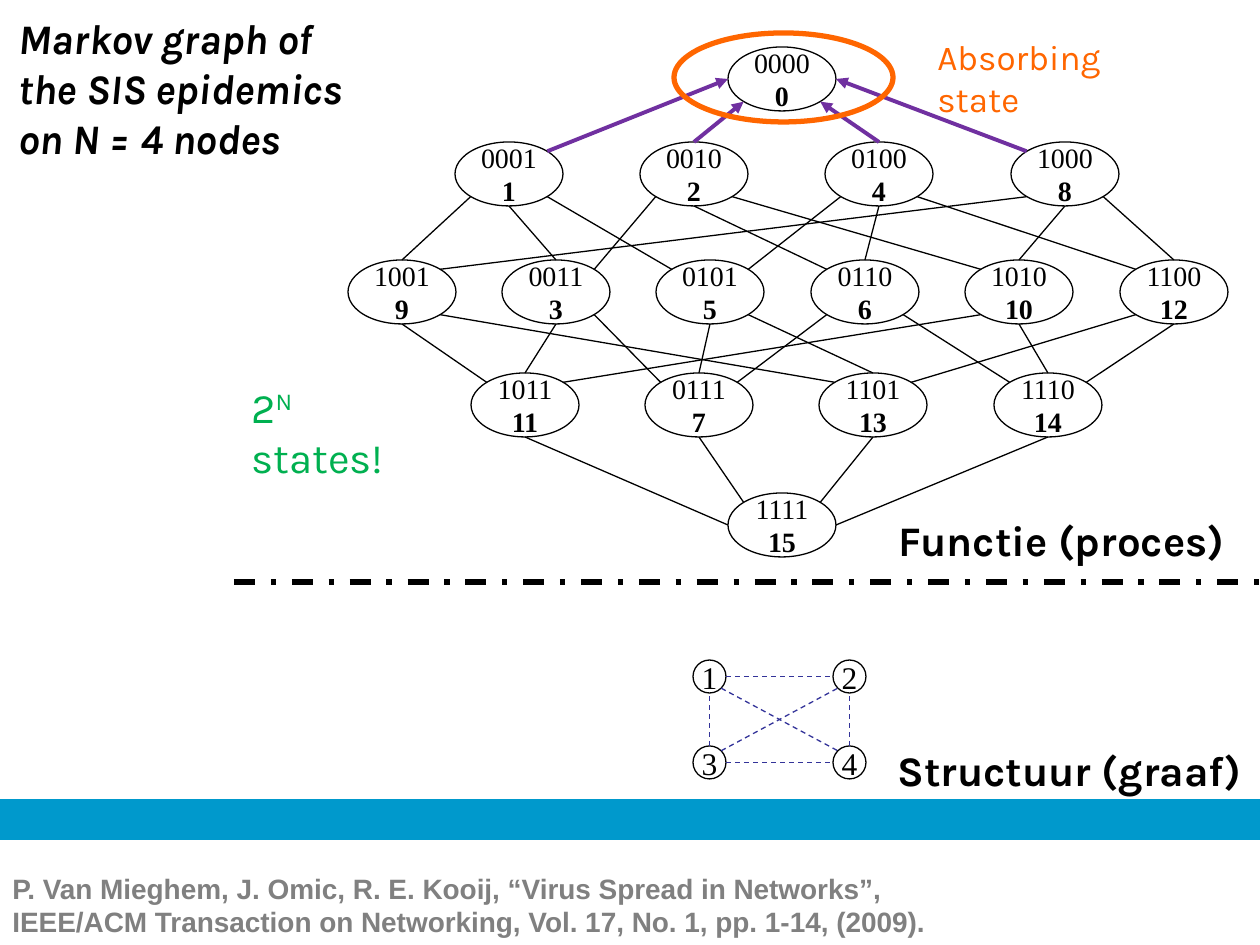
import lxml.etree
import pptx
import pptx.dml.color
import pptx.enum.dml
import pptx.enum.shapes
import pptx.enum.text
import pptx.oxml.ns
import pptx.util

PX = 914400 // 126
OVAL = pptx.enum.shapes.MSO_SHAPE.OVAL
DASH = pptx.enum.dml.MSO_LINE.DASH
DASH_DOT = pptx.enum.dml.MSO_LINE.DASH_DOT
qn = pptx.oxml.ns.qn
color = pptx.dml.color.RGBColor.from_string

deck = pptx.Presentation()
deck.slide_width = pptx.util.Inches(10)
deck.slide_height = pptx.util.Inches(7.5)
slide = deck.slides.add_slide(deck.slide_layouts[6])


def draw_line(begin, end, hex_color, width, dash=None, arrow=False):
    line = slide.shapes.add_connector(
        pptx.enum.shapes.MSO_CONNECTOR.STRAIGHT, *[round(v * PX) for v in (*begin, *end)])
    line.line.color.rgb = color(hex_color)
    line.line.width = pptx.util.Pt(width)
    if dash:
        line.line.dash_style = dash
    if arrow:
        outline = line.line._get_or_add_ln()
        lxml.etree.SubElement(outline, qn("a:headEnd"), type="triangle")
    lxml.etree.SubElement(line._element.spPr, qn("a:effectLst"))


def draw_oval(left, top, width, height, hex_color, weight):
    oval = slide.shapes.add_shape(OVAL, left * PX, top * PX, width * PX, height * PX)
    oval.shadow.inherit = False
    oval.fill.background()
    oval.line.color.rgb = color(hex_color)
    oval.line.width = pptx.util.Pt(weight)
    return oval


footer_band = slide.shapes.add_shape(
    pptx.enum.shapes.MSO_SHAPE.RECTANGLE, 0, 800 * PX, 1260 * PX, 39 * PX)
footer_band.shadow.inherit = False
footer_band.fill.solid()
footer_band.fill.fore_color.rgb = color("0099CC")
footer_band.line.color.rgb = color("0099CC")
footer_band.line.width = pptx.util.Pt(0.75)

state_rows = [
    (47, 728, 728, [0]),
    (142, 455, 1011, [1, 2, 4, 8]),
    (260, 348, 1120, [9, 3, 5, 6, 10, 12]),
    (373, 471, 994, [11, 7, 13, 14]),
    (493, 728, 728, [15]),
]
nodes = {}
for top, first, last, states in state_rows:
    for column, state in enumerate(states):
        left = first + (last - first) * column // max(len(states) - 1, 1)
        nodes[str(state)] = (left, top, 108, 64, [f"{state:04b}", str(state)], 16)
for index in range(4):
    column, row = index % 2, index // 2
    nodes[f"n{index + 1}"] = (693 + 140 * column, 660 + 86 * row, 33, 33, [str(index + 1)], 18)

for left, top, width, height, labels, size in nodes.values():
    node = draw_oval(left, top, width, height, "000000", 0.75)
    frame = node.text_frame
    frame.word_wrap = False
    frame.vertical_anchor = pptx.enum.text.MSO_ANCHOR.MIDDLE
    frame.margin_left = frame.margin_right = frame.margin_top = frame.margin_bottom = 0
    frame.text = "\n".join(labels)
    for order, paragraph in enumerate(frame.paragraphs):
        paragraph.alignment = pptx.enum.text.PP_ALIGN.CENTER
        paragraph.font.name = "Times New Roman"
        paragraph.font.size = pptx.util.Pt(size)
        paragraph.font.bold = order == 1
        paragraph.font.color.rgb = color("000000")

D = 0.71
compass = {"n": (0, -1), "ne": (D, -D), "e": (1, 0), "se": (D, D),
           "s": (0, 1), "sw": (-D, D), "w": (-1, 0), "nw": (-D, -D)}
edge_groups = [
    ("7030A0", 2.25, None, True, "0 w 1 ne, 0 sw 2 n, 0 se 4 n, 0 e 8 nw"),
    ("000000", 0.75, None, False,
     "1 sw 9 n, 1 s 3 n, 1 se 5 nw, 8 s 10 n, 8 se 12 n, 8 sw 9 ne, "
     "2 sw 3 ne, 2 s 6 nw, 2 se 10 nw, 4 s 6 n, 4 sw 5 ne, 4 se 12 nw, "
     "9 s 11 nw, 9 se 13 nw, 3 s 11 n, 3 se 7 nw, 5 s 7 n, 5 se 13 n, "
     "6 sw 7 ne, 6 se 14 nw, 10 s 14 n, 10 sw 11 ne, 12 s 14 ne, 12 sw 13 ne, "
     "11 s 15 w, 7 s 15 nw, 13 s 15 ne, 14 s 15 e"),
    ("333399", 0.75, DASH, False,
     "n1 se n4 nw, n1 e n2 w, n4 n n2 s, n3 n n1 s, n3 e n4 w, n3 ne n2 sw"),
]
for hex_color, weight, dash, arrow, edges in edge_groups:
    for edge in edges.split(", "):
        start, start_side, finish, finish_side = edge.split()
        ends = []
        for name, side in ((start, start_side), (finish, finish_side)):
            left, top, width, height = nodes[name][:4]
            dx, dy = compass[side]
            ends.append((left + width / 2 * (1 + dx), top + height / 2 * (1 + dy)))
        draw_line(*ends, hex_color, weight, dash, arrow)

draw_oval(674, 33, 219, 89, "FF6600", 3)
draw_line((234, 582), (1260, 582), "000000", 3, DASH_DOT)

captions = [
    (6, 6, 408, 165, ["Markov graph of", "the SIS epidemics", "on N = 4 nodes"],
     "Karla", 24, "000000", True, True),
    (239, 375, 200, 64, ["2^N^ states!"], "Karla", 24, "00B050", False, False),
    (925, 29, 260, 55, ["Absorbing state"], "Karla", 20, "FF6600", False, False),
    (0, 865, 960, 80,
     ["P. Van Mieghem, J. Omic, R. E. Kooij, “Virus Spread in Networks”,",
      "IEEE/ACM Transaction on Networking, Vol. 17, No. 1, pp. 1-14, (2009)."],
     "Arial", 16, "808080", True, False),
    (885, 738, 375, 64, ["Structuur (graaf)"], "Karla", 24, "000000", True, False),
    (886, 508, 374, 64, ["Functie (proces)"], "Karla", 24, "000000", True, False),
]
for left, top, width, height, lines, font, size, hex_color, bold, italic in captions:
    caption = slide.shapes.add_textbox(left * PX, top * PX, width * PX, height * PX)
    frame = caption.text_frame
    frame.word_wrap = True
    for order, text in enumerate(lines):
        paragraph = frame.add_paragraph() if order else frame.paragraphs[0]
        for part, piece in enumerate(text.split("^")):
            run = paragraph.add_run()
            run.text = piece
            if part == 1:
                run._r.get_or_add_rPr().set("baseline", "30000")
        paragraph.font.name = font
        paragraph.font.size = pptx.util.Pt(size)
        paragraph.font.bold = bold
        paragraph.font.italic = italic
        paragraph.font.color.rgb = color(hex_color)

deck.save("out.pptx")
